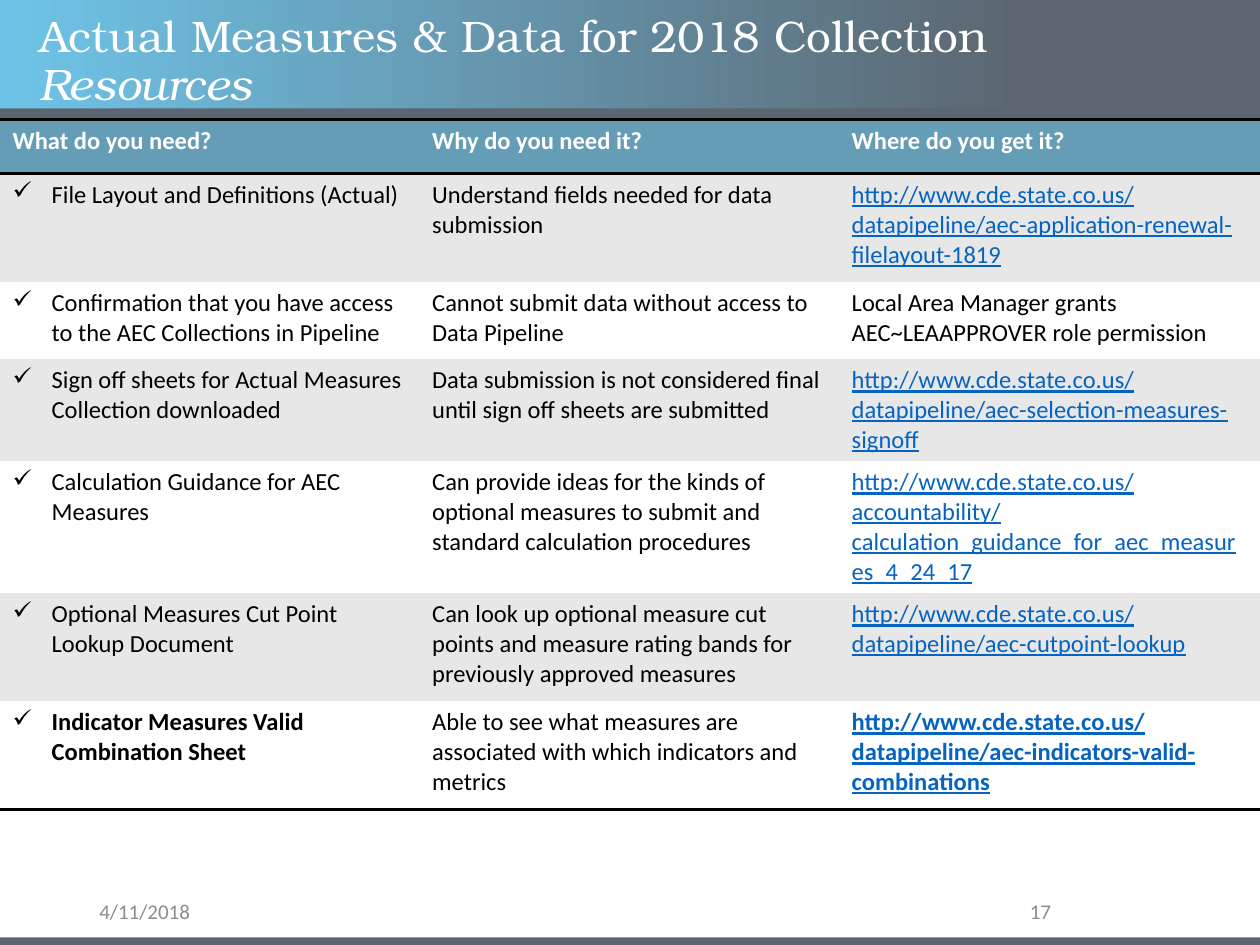
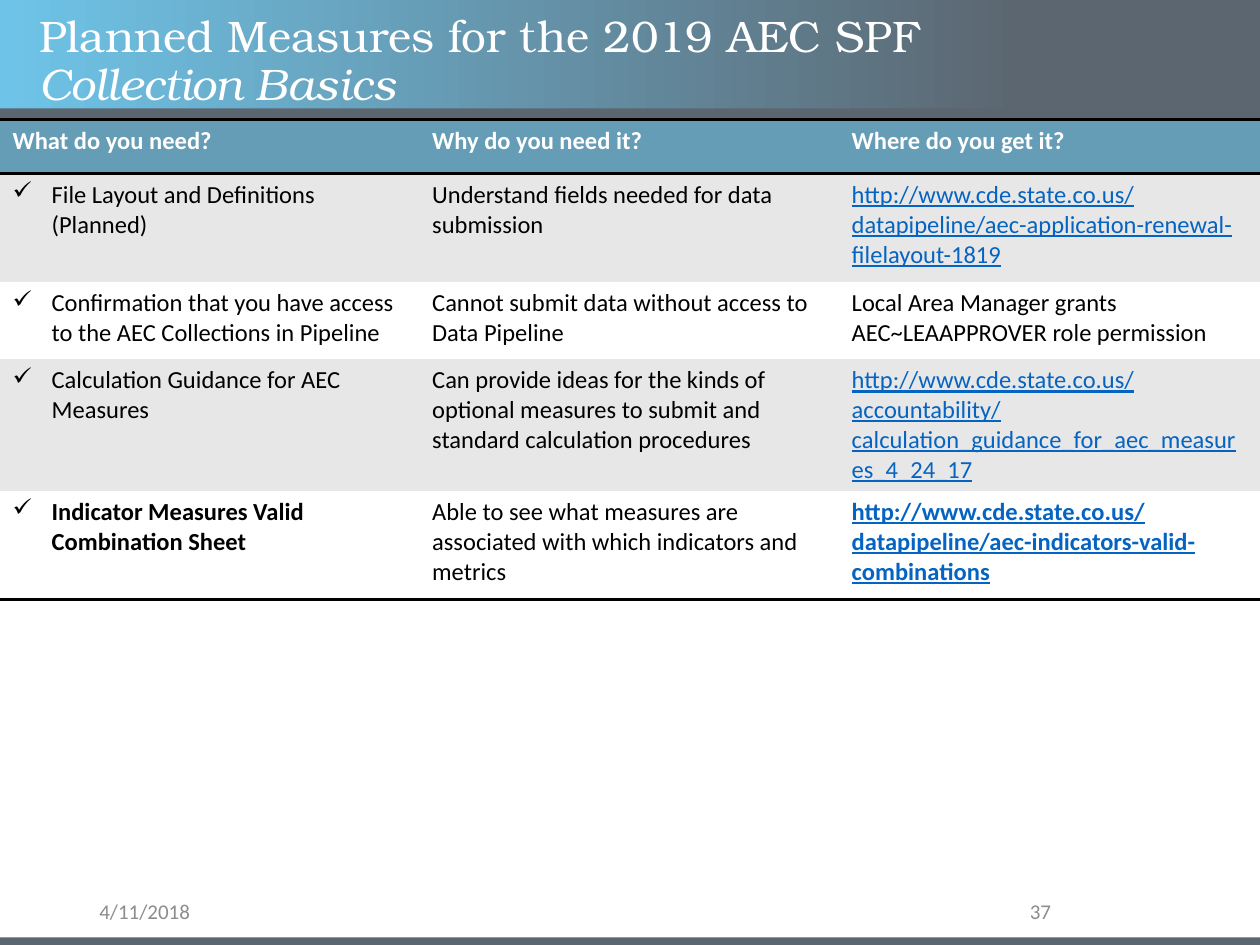
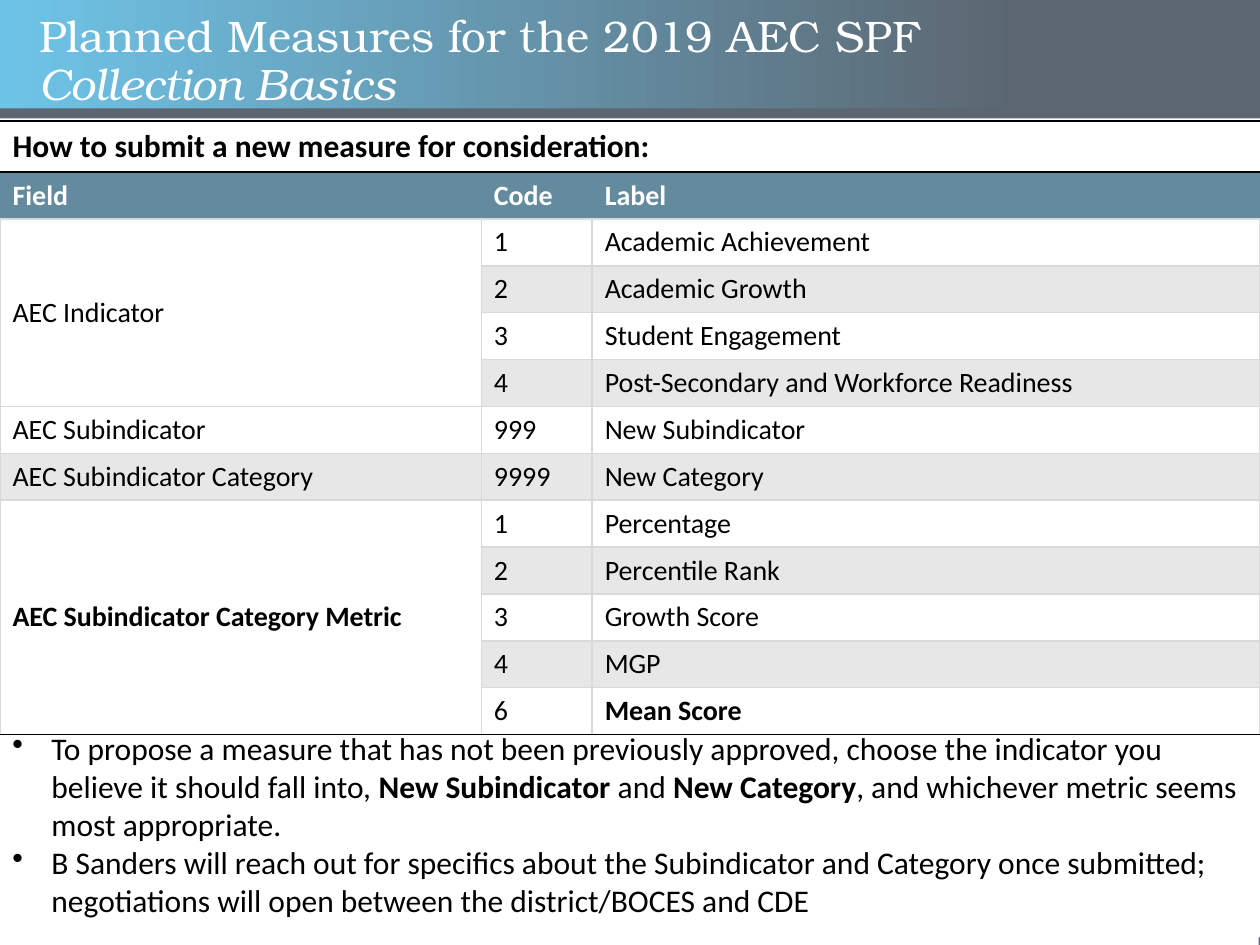
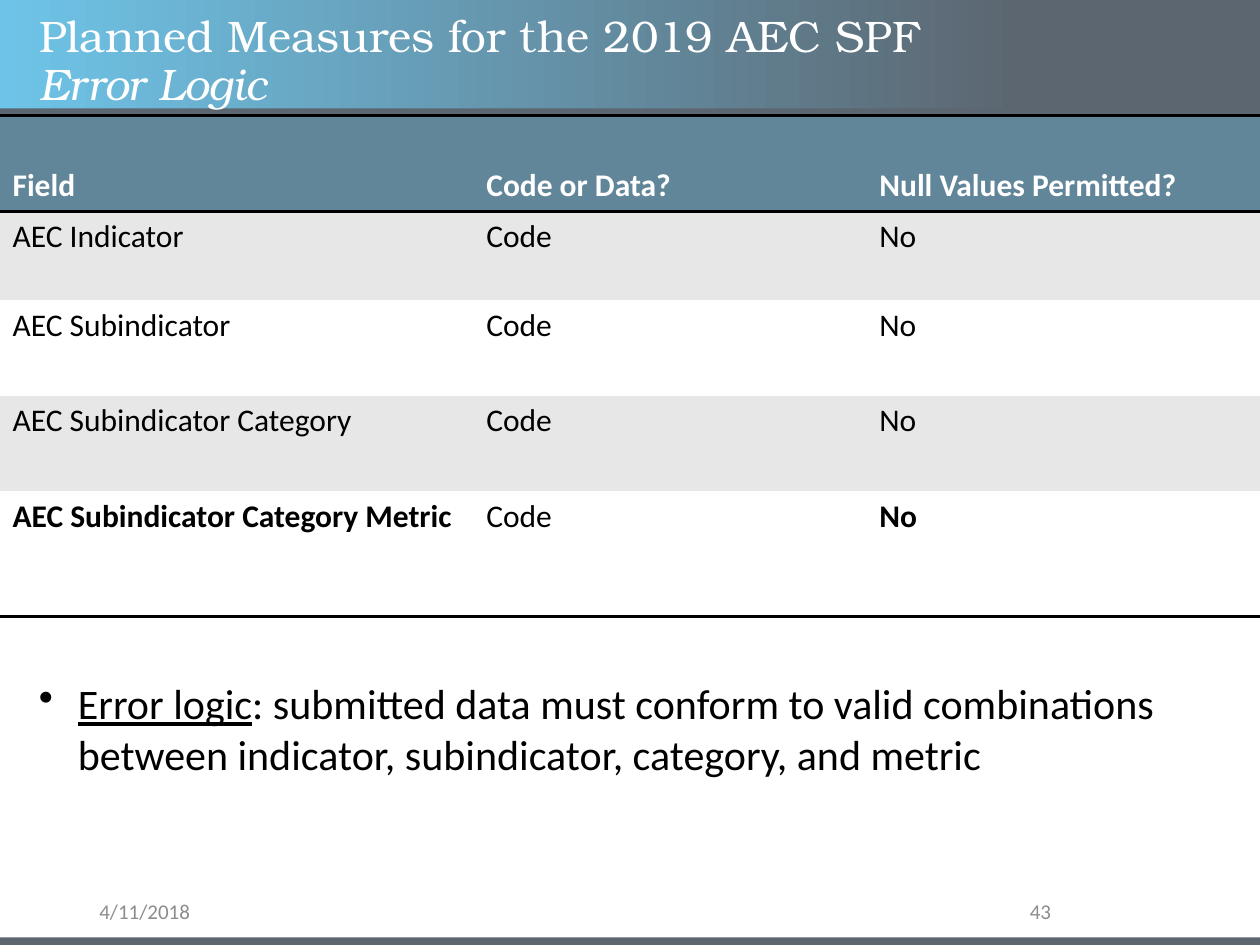
from dataclasses import dataclass, field
from typing import Optional

from pptx import Presentation
from pptx import util as u
from pptx.dml.color import RGBColor
from pptx.enum import shapes, text
from pptx.oxml.ns import qn
from lxml import etree

EMU_PER_PX = 9144  # 100 px to the inch
NO_TABLE_STYLE = "{2D5ABB26-0587-4C30-8999-92F81FD0307C}"


@dataclass(frozen=True)
class Theme:
    body_font: str = "Calibri"
    title_font: str = "TeX Gyre Bonum"
    black: str = "000000"
    white: str = "FFFFFF"
    sky: str = "6EC4E8"
    slate: str = "5C6670"
    stripe: str = "E7E7E7"
    grid: str = "D9D9D9"
    link: str = "0563C1"
    footer: str = "8C8C8C"
    resource_head: str = "669DB6"
    code_head: str = "638A9D"
    error_head: str = "628699"
    title_size: float = 25.2
    large: int = 24
    medium: int = 18
    code: int = 16
    small: int = 14
    footer_size: int = 12


THEME = Theme()


@dataclass(frozen=True)
class Box:
    left: int
    top: int
    width: int
    height: int

    def emu(self) -> tuple:
        return tuple(px(n) for n in (self.left, self.top, self.width, self.height))


@dataclass(frozen=True)
class Run:
    text: str
    bold: bool = False
    italic: bool = False
    underline: bool = False
    color: Optional[str] = None


@dataclass(frozen=True)
class Style:
    size: float
    color: str = THEME.black
    font: str = THEME.body_font


@dataclass(frozen=True)
class Cell:
    run: Run
    style: Style
    fill: Optional[str] = None
    anchor: text.MSO_ANCHOR = text.MSO_ANCHOR.TOP
    bullet: str = ""
    edges: dict = field(default_factory=dict)  # side letter -> (colour, points)


@dataclass(frozen=True)
class Resource:
    need: str
    why: str
    where: str
    height: int = 86


# Shared geometry
TITLE_BOX = Box(21, 21, 862, 57)
TITLE_BAND = Box(0, 0, 1000, 87)
THIN_BANDS = (Box(0, 86, 1000, 8), Box(0, 744, 1000, 8))
DATE_BOX = Box(69, 712, 225, 23)
NUMBER_BOX = Box(706, 712, 138, 23)
INDENT = 31
BLACK_RULE = (THEME.black, 2)
HEAD_EDGES = {"T": BLACK_RULE, "B": BLACK_RULE}

# Resource rows used by the first two slides
SITE = "http://www.cde.state.co.us/"
ACCESS = Resource("Confirmation that you have access to the AEC Collections in Pipeline",
                  "Cannot submit data without access to Data Pipeline",
                  "Local Area Manager grants AEC~LEAAPPROVER role permission", 61)
SIGN_OFF = Resource("Sign off sheets for Actual Measures Collection downloaded",
                    "Data submission is not considered final until sign off sheets are submitted",
                    SITE + "datapipeline/aec-selection-measures-signoff", 61)
GUIDANCE = Resource("Calculation Guidance for AEC Measures",
                    "Can provide ideas for the kinds of optional measures to submit "
                    "and standard calculation procedures",
                    SITE + "accountability/calculation_guidance_for_aec_measures_4_24_17")
CUT_POINTS = Resource("Optional Measures Cut Point Lookup Document",
                      "Can look up optional measure cut points and measure rating bands "
                      "for previously approved measures",
                      SITE + "datapipeline/aec-cutpoint-lookup")
COMBINATIONS = Resource("Indicator Measures Valid Combination Sheet",
                        "Able to see what measures are associated with which indicators and metrics",
                        SITE + "datapipeline/aec-indicators-valid-combinations")


def file_layout(kind: str) -> Resource:
    return Resource(f"File Layout and Definitions ({kind})",
                    "Understand fields needed for data submission",
                    SITE + "datapipeline/aec-application-renewal-filelayout-1819")


# Fields and codes for a new measure
CODE_GROUPS = (
    ("AEC Indicator", (("1", "Academic Achievement"), ("2", "Academic Growth"),
                       ("3", "Student Engagement"),
                       ("4", "Post-Secondary and Workforce Readiness"))),
    ("AEC Subindicator", (("999", "New Subindicator"),)),
    ("AEC Subindicator Category", (("9999", "New Category"),)),
    ("AEC Subindicator Category Metric", (("1", "Percentage"), ("2", "Percentile Rank"),
                                          ("3", "Growth Score"), ("4", "MGP"),
                                          ("6", "Mean Score"))),
)


def px(length: int) -> u.Emu:
    return u.Emu(length * EMU_PER_PX)


def stripe(index: int) -> str:
    return THEME.stripe if index % 2 else THEME.white


# Text
def add_bullet(paragraph, character: str) -> None:
    properties = paragraph._p.get_or_add_pPr()
    properties.set("marL", str(px(INDENT)))
    properties.set("indent", str(-px(INDENT)))
    etree.SubElement(properties, qn("a:buChar")).set("char", character)


def add_run(paragraph, run: Run, style: Style) -> None:
    part = paragraph.add_run()
    part.text = run.text
    font = part.font
    font.name, font.size = style.font, u.Pt(style.size)
    font.bold, font.italic, font.underline = run.bold, run.italic, run.underline
    font.color.rgb = RGBColor.from_string(run.color or style.color)


def write(frame, paragraphs: list, style: Style, bullet: str = "",
          align=text.PP_ALIGN.LEFT, anchor=text.MSO_ANCHOR.TOP) -> None:
    frame.word_wrap = True
    frame.vertical_anchor = anchor
    for index, runs in enumerate(paragraphs):
        paragraph = frame.add_paragraph() if index else frame.paragraphs[0]
        paragraph.alignment = align
        if bullet:
            add_bullet(paragraph, bullet)
        for run in runs:
            add_run(paragraph, run, style)


# Shapes and slide frame
def add_rectangle(slide, box: Box, color: str):
    shape = slide.shapes.add_shape(shapes.MSO_SHAPE.RECTANGLE, *box.emu())
    shape.shadow.inherit = False
    shape.line.fill.background()
    shape.fill.solid()
    shape.fill.fore_color.rgb = RGBColor.from_string(color)
    return shape


def add_text(slide, box: Box, paragraphs: list, style: Style, **options) -> None:
    shape = slide.shapes.add_textbox(*box.emu())
    write(shape.text_frame, paragraphs, style, **options)


def add_title(slide, heading: str, subtitle: str) -> None:
    title = slide.shapes.title
    title.left, title.top, title.width, title.height = TITLE_BOX.emu()
    title.element.getparent().append(title.element)  # above the bands
    frame = title.text_frame
    frame.auto_size = text.MSO_AUTO_SIZE.NONE
    style = Style(THEME.title_size, THEME.white, THEME.title_font)
    write(frame, [[Run(heading)]], style, anchor=text.MSO_ANCHOR.MIDDLE)
    paragraph = frame.paragraphs[0]
    paragraph.line_spacing = 0.9
    paragraph.add_line_break()
    add_run(paragraph, Run(subtitle, italic=True), style)


def add_slide(presentation, heading: str, subtitle: str, number: str = ""):
    slide = presentation.slides.add_slide(presentation.slide_layouts[5])
    fill = add_rectangle(slide, TITLE_BAND, THEME.sky).fill
    fill.gradient()
    fill.gradient_angle = 0
    for stop, color, position in zip(fill.gradient_stops, (THEME.sky, THEME.slate), (0, 0.81)):
        stop.color.rgb = RGBColor.from_string(color)
        stop.position = position
    for band in THIN_BANDS:
        add_rectangle(slide, band, THEME.slate)
    if number:
        style = Style(THEME.footer_size, THEME.footer)
        middle = text.MSO_ANCHOR.MIDDLE
        add_text(slide, DATE_BOX, [[Run("4/11/2018")]], style, anchor=middle)
        add_text(slide, NUMBER_BOX, [[Run(number)]], style, anchor=middle,
                 align=text.PP_ALIGN.RIGHT)
    add_title(slide, heading, subtitle)
    return slide


# Tables
def draw_edges(cell, edges: dict) -> None:
    properties = cell._tc.get_or_add_tcPr()
    for index, side in enumerate(s for s in "LRTB" if s in edges):
        color, points = edges[side]
        line = etree.Element(qn(f"a:ln{side}"), w=str(u.Pt(points)))
        fill = etree.SubElement(line, qn("a:solidFill"))
        etree.SubElement(fill, qn("a:srgbClr")).set("val", color)
        properties.insert(index, line)


def fill_cell(target, cell: Cell) -> None:
    if cell.fill:
        target.fill.solid()
        target.fill.fore_color.rgb = RGBColor.from_string(cell.fill)
    else:
        target.fill.background()
    draw_edges(target, cell.edges)
    target.vertical_anchor = cell.anchor
    if cell.run.text:
        paragraph = target.text_frame.paragraphs[0]
        if cell.bullet:
            add_bullet(paragraph, cell.bullet)
        add_run(paragraph, cell.run, cell.style)


def add_table(slide, top: int, widths: tuple, heights: list, rows: list):
    box = Box(0, top, sum(widths), sum(heights))
    frame = slide.shapes.add_table(len(rows), len(widths), *box.emu())
    for style_id in frame.element.iter(qn("a:tableStyleId")):
        style_id.text = NO_TABLE_STYLE
    table = frame.table
    table.first_row = table.horz_banding = False
    for column, width in zip(table.columns, widths):
        column.width = px(width)
    for row, height, cells in zip(table.rows, heights, rows):
        row.height = px(height)
        for target, cell in zip(row.cells, cells):
            fill_cell(target, cell)
    return table


def header_row(labels: tuple, size: int, fill: str, edges: dict,
               anchor=text.MSO_ANCHOR.TOP) -> list:
    style = Style(size, THEME.white)
    return [Cell(Run(label, bold=True), style, fill, anchor, edges=edges) for label in labels]


def add_resource_table(slide, resources: list) -> None:
    style = Style(THEME.small)
    rows = [header_row(("What do you need?", "Why do you need it?", "Where do you get it?"),
                       THEME.small, THEME.resource_head, HEAD_EDGES)]
    for index, resource in enumerate(resources, 1):
        last = index == len(resources)
        linked = resource.where.startswith("http")
        where = Run(resource.where, bold=last, underline=linked,
                    color=THEME.link if linked else None)
        look = {"fill": stripe(index), "edges": {"B": BLACK_RULE} if last else {}}
        rows.append([Cell(Run(resource.need, bold=last), style, bullet="✓", **look),
                     Cell(Run(resource.why), style, **look),
                     Cell(where, style, **look)])
    heights = [43] + [resource.height for resource in resources]
    add_table(slide, 95, (333, 333, 334), heights, rows)


def add_code_table(slide) -> None:
    black, gray = (THEME.black, 1), (THEME.grid, 1)
    style = Style(THEME.code)
    banner = Run("How to submit a new measure for consideration:", bold=True)
    rows = [[Cell(run, Style(THEME.medium), edges={"T": black, "B": black})
             for run in (banner, Run(""), Run(""))],
            header_row(("Field", "Code", "Label"), THEME.code, THEME.code_head,
                       {"T": black, "B": gray})]
    merges = [((0, 0), (0, 2))]
    total = len(rows) + sum(len(codes) for _, codes in CODE_GROUPS)
    for name, codes in CODE_GROUPS:
        first = len(rows)
        merges.append(((first, 0), (first + len(codes) - 1, 0)))
        for offset, (code, label) in enumerate(codes):
            index = len(rows)
            last = index == total - 1
            edges = dict.fromkeys("LRTB", gray) | ({"B": black} if last else {})
            field_run = Run("" if offset else name, bold=name == CODE_GROUPS[-1][0])
            rows.append([
                Cell(field_run, style, stripe(first), text.MSO_ANCHOR.MIDDLE, edges=edges),
                Cell(Run(code), style, stripe(index), edges=edges),
                Cell(Run(label, bold=last), style, stripe(index), edges=edges)])
    # The merged field cell draws its own lower edge
    rows[merges[-1][0][0]][0].edges["B"] = black
    table = add_table(slide, 96, (382, 88, 530), [37] + [34] * (total - 1), rows)
    for start, end in merges:
        if start != end:
            table.cell(*start).merge(table.cell(*end))


def add_error_table(slide) -> None:
    fields = [name for name, _ in CODE_GROUPS]
    rows = [header_row(("Field", "Code or Data?", "Null Values Permitted?"), THEME.medium,
                       THEME.error_head, HEAD_EDGES, text.MSO_ANCHOR.BOTTOM)]
    for index, name in enumerate(fields, 1):
        last = index == len(fields)
        rows.append([Cell(run, Style(THEME.medium), stripe(index),
                          edges={"B": BLACK_RULE} if last else {})
                     for run in (Run(name, bold=last), Run("Code"), Run("No", bold=last))])
    add_table(slide, 92, (376, 312, 312), [76, 70, 76, 76, 99], rows)


def main() -> None:
    presentation = Presentation()
    presentation.slide_width, presentation.slide_height = px(1000), px(750)
    planned = "Planned Measures for the 2019 AEC SPF"

    # Resources for actual measures
    slide = add_slide(presentation, "Actual Measures & Data for 2018 Collection",
                      "Resources", "17")
    add_resource_table(slide, [file_layout("Actual"), ACCESS, SIGN_OFF, GUIDANCE,
                               CUT_POINTS, COMBINATIONS])

    # Resources for planned measures
    slide = add_slide(presentation, planned, "Collection Basics", "37")
    add_resource_table(slide, [file_layout("Planned"), ACCESS, GUIDANCE, COMBINATIONS])

    # Submitting a new measure
    slide = add_slide(presentation, planned, "Collection Basics")
    panel = add_rectangle(slide, Box(0, 574, 999, 192), THEME.white)
    write(panel.text_frame, [
        [Run("To propose a measure that has not been previously approved, choose the "
             "indicator you believe it should fall into, "),
         Run("New Subindicator ", bold=True), Run("and "), Run("New Category", bold=True),
         Run(", and whichever metric seems most appropriate.")],
        [Run("B Sanders will reach out for specifics about the Subindicator and Category "
             "once submitted; negotiations will open between the district/BOCES and CDE")],
    ], Style(THEME.medium), bullet="•")
    add_code_table(slide)

    # Error logic
    slide = add_slide(presentation, planned, "Error Logic", "43")
    add_error_table(slide)
    add_text(slide, Box(21, 533, 979, 91), [
        [Run("Error logic", underline=True),
         Run(": submitted data must conform to valid combinations between indicator, "
             "subindicator, category, and metric")],
    ], Style(THEME.large), bullet="•")

    presentation.save("out.pptx")


if __name__ == "__main__":
    main()
